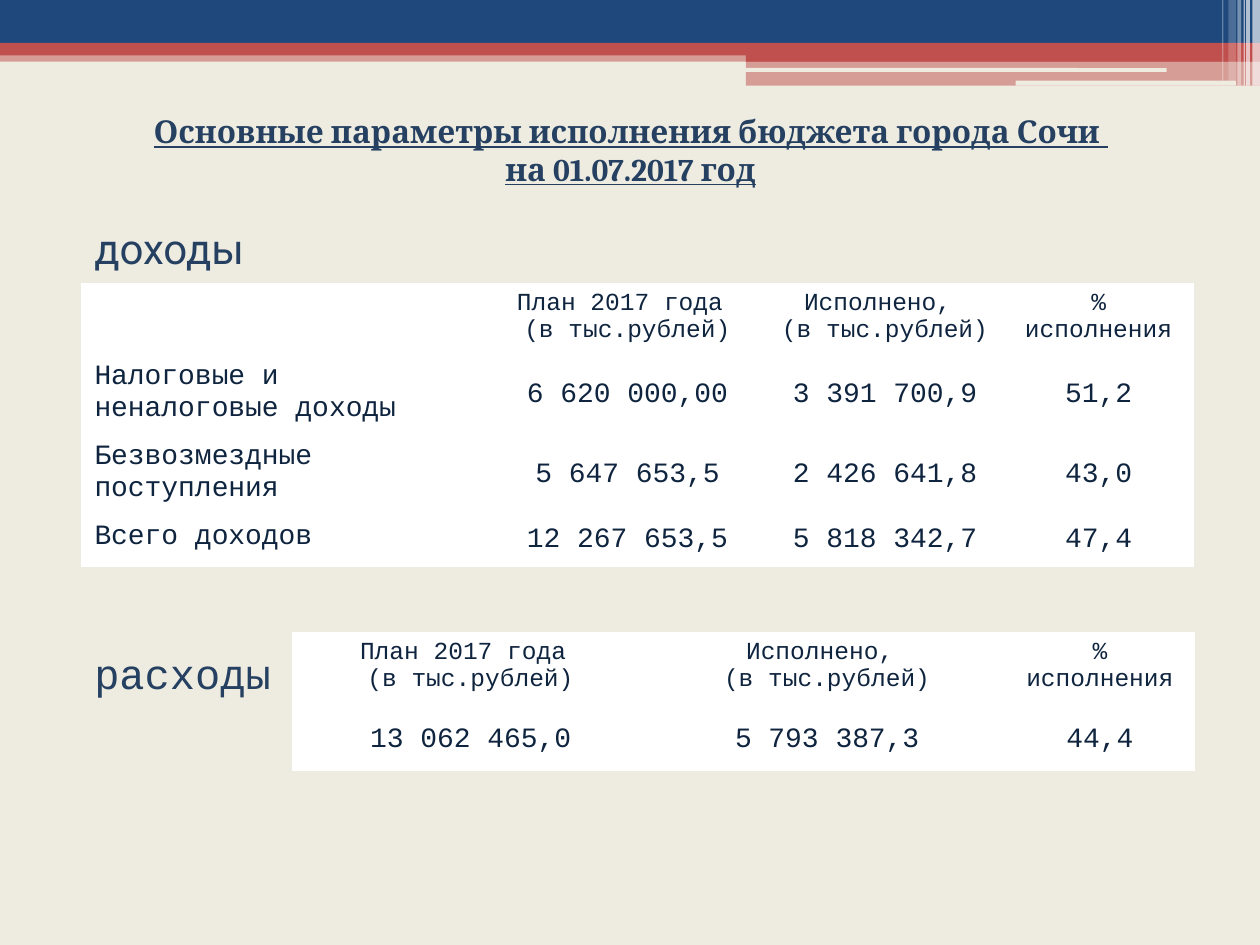
from lxml.etree import SubElement
from pptx import Presentation
from pptx.dml.color import RGBColor
from pptx.enum.shapes import MSO_SHAPE as Preset
from pptx.enum.text import MSO_ANCHOR as Anchor, MSO_AUTO_SIZE as AutoSize, PP_ALIGN as Align
from pptx.oxml.ns import qn
from pptx.util import Inches, Pt

NAVY, RED, CREAM, WHITE = "1F497D", "C0504D", "EEECE1", "FFFFFF"
HEADING, INK = "254061", "0F243E"
MONO = "Courier New"


def paint(fill, color):
    fill.solid()
    fill.fore_color.rgb = RGBColor.from_string(color)


def write(frame, text, font=MONO, size=16, color=INK, align=Align.LEFT,
          anchor=Anchor.TOP, bold=False, underline=False):
    """Fill a text frame, one paragraph for each line of text."""
    frame.text = text
    frame.word_wrap = True
    frame.vertical_anchor = anchor
    for paragraph in frame.paragraphs:
        paragraph.alignment = align
        for run in paragraph.runs:
            run.font.name = font
            run.font.size = Pt(size)
            run.font.bold = bold
            run.font.underline = underline
            paint(run.font.fill, color)


prs = Presentation()
prs.slide_width, prs.slide_height = Inches(10), Inches(7.5)
slide = prs.slides.add_slide(prs.slide_layouts[5])
paint(slide.background.fill, CREAM)

# Header decoration: preset, left, top, width, height, colour, opacity in percent
header_bands = [
    (Preset.RECTANGLE, 0, 0.4, 10, 0.09, RED, 50),
    (Preset.RECTANGLE, 0, 0, 10, 0.34, NAVY, 100),
    (Preset.RECTANGLE, 0, 0.34, 10, 0.1, RED, 100),
    (Preset.RECTANGLE, 5.92, 0.39, 4.08, 0.1, RED, 100),
    (Preset.RECTANGLE, 5.92, 0.48, 4.08, 0.2, RED, 50),
    (Preset.ROUNDED_RECTANGLE, 5.91, 0.54, 3.35, 0.03, CREAM, 100),
    (Preset.ROUNDED_RECTANGLE, 8.06, 0.64, 1.75, 0.04, CREAM, 100),
]
# Light stripes at the right edge: left, width, height, opacity
edge_stripes = [
    (9.94, 0.06, 0.68, 65), (9.89, 0.03, 0.68, 65), (9.87, 0.01, 0.68, 60),
    (9.82, 0.03, 0.68, 40), (9.75, 0.06, 0.64, 20), (9.7, 0.01, 0.64, 30),
]
header_bands += [(Preset.RECTANGLE, left, 0, width, height, WHITE, opacity)
                 for left, width, height, opacity in edge_stripes]
for preset, left, top, width, height, color, opacity in header_bands:
    band = slide.shapes.add_shape(preset, Inches(left), Inches(top), Inches(width), Inches(height))
    band.shadow.inherit = False
    band.line.fill.background()
    paint(band.fill, color)
    if opacity < 100:
        rgb = band._element.spPr.find(qn("a:solidFill")).find(qn("a:srgbClr"))
        SubElement(rgb, qn("a:alpha"), val=str(opacity * 1000))

title = slide.shapes.title
title.left, title.top, title.width, title.height = Inches(0.24), Inches(0.84), Inches(9.53), Inches(0.71)
write(title.text_frame, "Основные параметры исполнения бюджета города Сочи \nна 01.07.2017 год",
      font="Cambria", size=18, color=HEADING, align=Align.CENTER, bold=True, underline=True)
title.text_frame.auto_size = AutoSize.NONE

for label, top, font in [("доходы", 1.72, "Roboto"), ("расходы", 5.09, MONO)]:
    section = slide.shapes.add_textbox(Inches(0.65), Inches(top), Inches(2.2), Inches(0.5))
    write(section.text_frame, label, font=font, size=24, color=HEADING)

column_heads = ["План 2017 года \n(в тыс.рублей)", "Исполнено, \n(в тыс.рублей)", "% исполнения"]
income = [
    ["", *column_heads],
    ["Налоговые и неналоговые доходы", "6 620 000,00", "3 391 700,9", "51,2"],
    ["Безвозмездные поступления", "5 647 653,5", "2 426 641,8", "43,0"],
    ["Всего доходов", "12 267 653,5", "5 818 342,7", "47,4"],
]
expenses = [column_heads, ["13 062 465,0", "5 793 387,3", "44,4"]]

# Rows of text, left, top, column widths, row heights, number of label columns
budget_tables = [
    (income, 0.65, 2.25, [3.23, 2.2, 1.89, 1.5], [0.56, 0.6, 0.6, 0.41], 1),
    (expenses, 2.32, 5.02, [2.83, 2.83, 1.5], [0.62, 0.47], 0),
]
for rows, left, top, widths, heights, label_columns in budget_tables:
    table = slide.shapes.add_table(len(rows), len(widths), Inches(left), Inches(top),
                                   Inches(sum(widths)), Inches(sum(heights))).table
    for column, width in zip(table.columns, widths):
        column.width = Inches(width)
    for row, height in zip(table.rows, heights):
        row.height = Inches(height)
    for r, values in enumerate(rows):
        for c, value in enumerate(values):
            cell = table.cell(r, c)
            paint(cell.fill, WHITE)
            is_label = c < label_columns
            write(cell.text_frame, value, size=16 if r else 14,
                  align=Align.LEFT if is_label else Align.CENTER)
            cell.vertical_anchor = Anchor.MIDDLE if r and not is_label else Anchor.TOP

prs.save("out.pptx")
